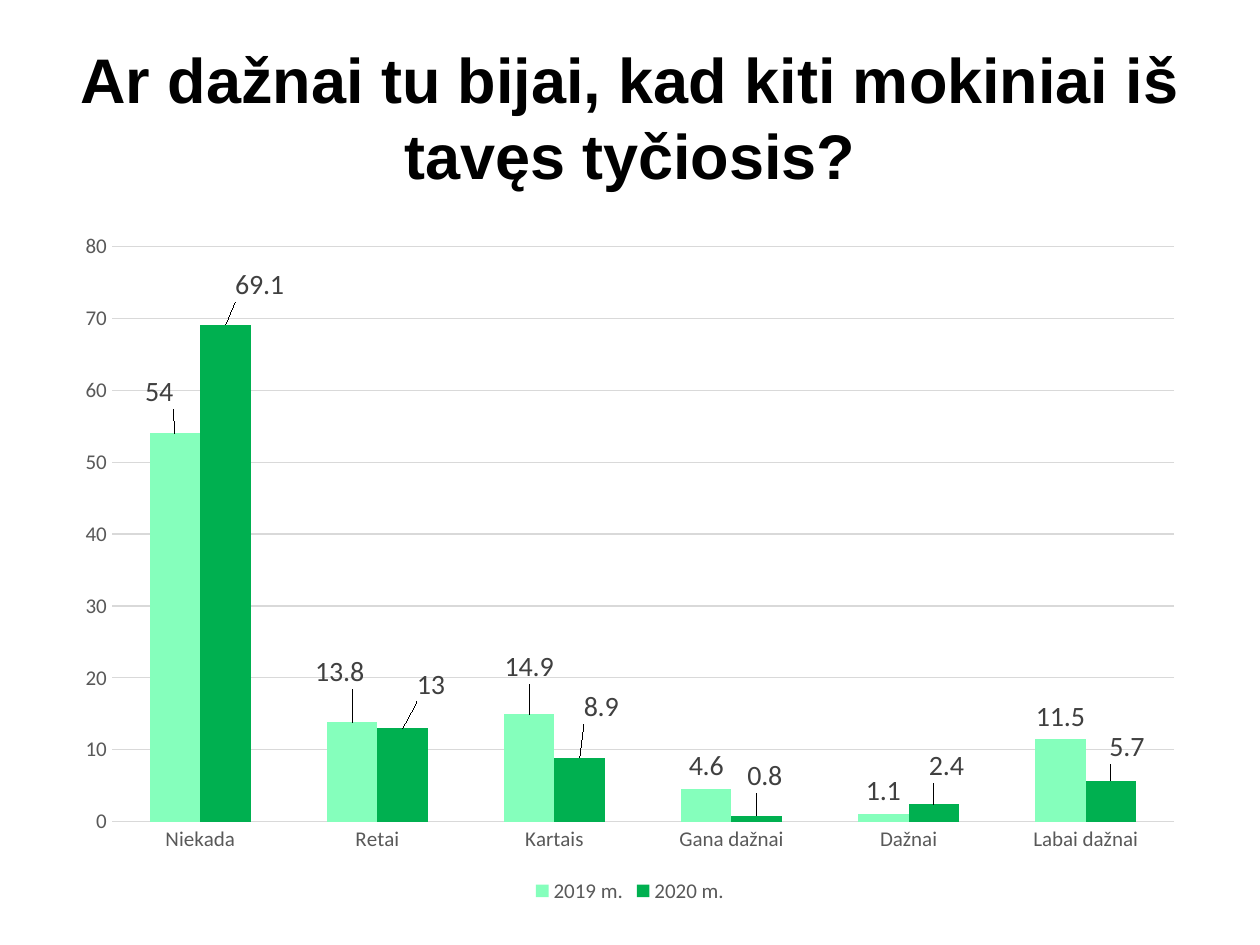
from lxml.etree import SubElement
from pptx import Presentation
from pptx.chart.data import CategoryChartData
from pptx.dml.color import RGBColor
from pptx.enum.chart import XL_CHART_TYPE, XL_LABEL_POSITION, XL_LEGEND_POSITION, XL_TICK_MARK
from pptx.enum.text import MSO_ANCHOR, PP_ALIGN
from pptx.oxml.ns import qn
from pptx.util import Inches, Pt

BLACK = RGBColor(0x00, 0x00, 0x00)
LABEL_GREY = RGBColor(0x40, 0x40, 0x40)
AXIS_GREY = RGBColor(0x59, 0x59, 0x59)
GRID_GREY = RGBColor(0xD9, 0xD9, 0xD9)
LIGHT_GREEN = RGBColor(0x85, 0xFF, 0xBC)
GREEN = RGBColor(0x00, 0xB0, 0x50)

CATEGORIES = ["Niekada", "Retai", "Kartais", "Gana dažnai", "Dažnai", "Labai dažnai"]
# Label shifts: point index -> (right, down) in percent of the chart size
SERIES = [
    ("2019 m.", [54, 13.8, 14.9, 4.6, 1.1, 11.5], LIGHT_GREEN,
     {0: (-1.4, -2.8), 1: (-1.1, -4.1), 2: (0, -3.6)}),
    ("2020 m.", [69.1, 13, 8.9, 0.8, 2.4, 5.7], GREEN,
     {0: (3, -2.6), 1: (2.5, -3.1), 2: (1.9, -4.1),
      3: (0.7, -2.5), 4: (1.1, -2.3), 5: (1.4, -1.7)}),
]


def set_font(font, size, color, name="Calibri", bold=False):
    font.size, font.name, font.bold = Pt(size), name, bold
    font.color.rgb = color


def fill_layout(layout, values):
    manual = SubElement(layout, qn("c:manualLayout"))
    for tag, value in values.items():
        SubElement(manual, qn(f"c:{tag}")).set("val", str(value))


prs = Presentation()
prs.slide_width, prs.slide_height = Inches(10), Inches(7.5)
s = prs.slides.add_slide(prs.slide_layouts[6])

# Title
tf = s.shapes.add_textbox(Inches(0.5), Inches(0.3), Inches(9), Inches(1.25)).text_frame
tf.word_wrap = True
tf.vertical_anchor = MSO_ANCHOR.MIDDLE
p = tf.paragraphs[0]
p.alignment = PP_ALIGN.CENTER
r = p.add_run()
r.text = "Ar dažnai tu bijai, kad kiti mokiniai iš tavęs tyčiosis?"
set_font(r.font, 36, BLACK, "Arial", True)

# Chart
data = CategoryChartData()
data.categories = CATEGORIES
for name, values, *_ in SERIES:
    data.add_series(name, values)
chart = s.shapes.add_chart(XL_CHART_TYPE.COLUMN_CLUSTERED, Inches(0.5), Inches(1.75),
                           Inches(9), Inches(5.46), data).chart
set_font(chart.font, 10, BLACK)
chart.has_title = False
plot = chart.plots[0]
plot.gap_width, plot.overlap, plot.vary_by_categories = 150, 0, False

# Plot area position, as shares of the chart
plot_area = chart.element.find(".//" + qn("c:plotArea"))
layout = plot_area.find(qn("c:layout"))
if layout is None:
    layout = SubElement(plot_area, qn("c:layout"))
    plot_area.insert(0, layout)
fill_layout(layout, {"layoutTarget": "inner", "xMode": "edge", "yMode": "edge",
                     "x": 0.043, "y": 0.038, "w": 0.937, "h": 0.836})

# Axes and gridlines
for axis in (chart.category_axis, chart.value_axis):
    axis.major_tick_mark = axis.minor_tick_mark = XL_TICK_MARK.NONE
    axis.format.line.fill.background()
    set_font(axis.tick_labels.font, 12, AXIS_GREY)
axis = chart.value_axis
axis.minimum_scale, axis.maximum_scale, axis.major_unit = 0, 80, 10
axis.has_major_gridlines = True
axis.major_gridlines.format.line.color.rgb = GRID_GREY
axis.major_gridlines.format.line.width = Pt(0.75)

# Legend
chart.has_legend = True
chart.legend.position = XL_LEGEND_POSITION.BOTTOM
chart.legend.include_in_layout = False
set_font(chart.legend.font, 12, AXIS_GREY)

# Bars with value labels, some of them shifted
for series, (_, _, color, shifts) in zip(plot.series, SERIES):
    series.format.fill.solid()
    series.format.fill.fore_color.rgb = color
    series.invert_if_negative = False
    labels = series.data_labels
    labels.show_value = True
    labels.position = XL_LABEL_POSITION.OUTSIDE_END
    set_font(labels.font, 16, LABEL_GREY)
    for i in shifts:
        label = series.points[i].data_label
        label.position = XL_LABEL_POSITION.OUTSIDE_END
        set_font(label.font, 16, LABEL_GREY)

for ser, (*_, shifts) in zip(chart.element.iter(qn("c:ser")), SERIES):
    for d_lbl, (dx, dy) in zip(ser.iter(qn("c:dLbl")), shifts.values()):
        layout = SubElement(d_lbl, qn("c:layout"))
        d_lbl.insert(1, layout)
        fill_layout(layout, {"x": round(dx / 100, 3), "y": round(dy / 100, 3)})

prs.save("out.pptx")
